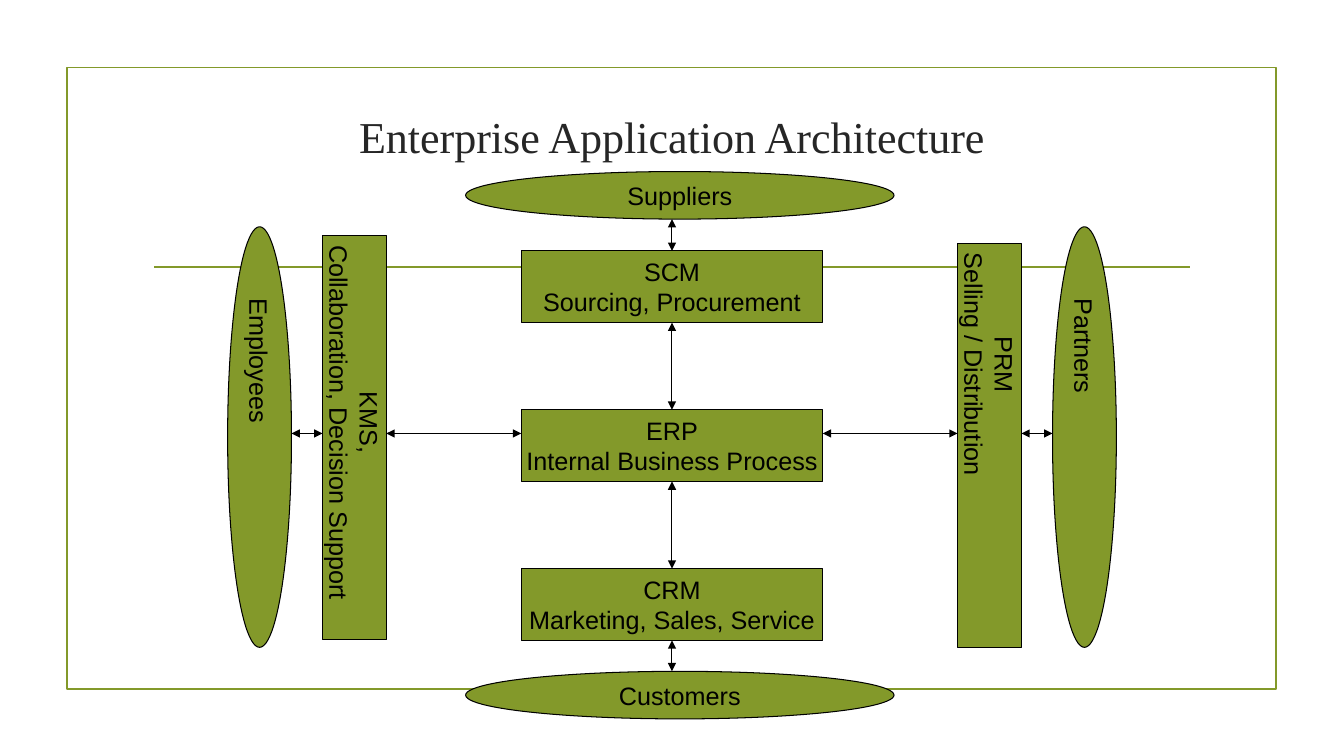
from pptx import Presentation
from pptx.dml.color import RGBColor
from pptx.enum.shapes import MSO_CONNECTOR as Conn, MSO_SHAPE as Kind
from pptx.enum.text import MSO_ANCHOR as Anchor, PP_ALIGN as Align
from pptx.oxml.ns import qn
from pptx.util import Pt
from lxml.etree import SubElement

GREEN, BLACK, DARK = "83992A", "000000", "262626"
TOP, BOTTOM = 0, 2


def color(code):
    return RGBColor.from_string(code)


def write(frame, lines, size, font, code):
    frame.vertical_anchor = Anchor.MIDDLE
    for i, line in enumerate(lines):
        para = frame.add_paragraph() if i else frame.paragraphs[0]
        para.alignment = Align.CENTER
        run = para.add_run()
        run.text = line
        run.font.size = Pt(size)
        run.font.name = font
        run.font.color.rgb = color(code)


def node(slide, kind, box, lines, upright=False):
    shape = slide.shapes.add_shape(kind, *map(Pt, box))
    shape.shadow.inherit = False
    shape.fill.solid()
    shape.fill.fore_color.rgb = color(GREEN)
    shape.line.color.rgb = color(BLACK)
    shape.line.width = Pt(0.75)
    frame = shape.text_frame
    frame.word_wrap = False
    if upright:
        frame._txBody.bodyPr.set("vert", "eaVert")
    write(frame, lines, 18, "Arial", BLACK)
    return shape


def rule(slide, start, end, code, width):
    line = slide.shapes.add_connector(Conn.STRAIGHT, *map(Pt, start + end))
    line.line.color.rgb = color(code)
    line.line.width = Pt(width)
    SubElement(line._element.spPr, qn("a:effectLst"))
    return line


def arrow(slide, start, end):
    line = rule(slide, start, end, BLACK, 0.75)
    ln = line.line._get_or_add_ln()
    for tag in ("a:headEnd", "a:tailEnd"):
        SubElement(ln, qn(tag), type="triangle")
    return line


def border(slide, box):
    x, y, w, h = box
    frame = slide.shapes.add_shape(Kind.RECTANGLE, *map(Pt, box))
    frame.shadow.inherit = False
    frame.fill.background()
    frame.line.color.rgb = color(GREEN)
    frame.line.width = Pt(1.25)
    rule(slide, (x + 62.5, y + 142.6), (x + w - 61.5, y + 142.6), GREEN, 1.25)


def title(slide, box, text):
    frame = slide.shapes.add_textbox(*map(Pt, box)).text_frame
    frame.word_wrap = True
    write(frame, [text], 31.5, "Times New Roman", DARK)


def side(slide, box, group, system, drop, mid, flip=False):
    """An outer group ellipse and the system bar beside it, joined at mid."""
    x, y, w, h = box
    thick = 45.6
    left, right = x, x + w - thick
    outer, inner = (right, left) if flip else (left, right)
    node(slide, Kind.OVAL, (outer, y, thick, h), [group], True)
    node(slide, Kind.RECTANGLE, (inner, y + drop, thick, 289), system, True)
    arrow(slide, (left + thick, mid), (right, mid))


def column(slide, box, ends, systems):
    """Stacked systems between an ellipse at the top and one at the bottom."""
    x, y, w, h = box
    cap, wide, high, step = 34, 215.4, 51.2, 113.5
    left, first = x + 39.7, y + 56.7
    mid = left + wide / 2
    tops = [first + i * step for i in range(len(systems))]
    caps = (y, y + h - cap)
    for name, top in zip(ends, caps):
        node(slide, Kind.OVAL, (x, top, w, cap), [name])
    cards = [node(slide, Kind.RECTANGLE, (left, top, wide, high), lines)
             for top, lines in zip(tops, systems)]

    # Links between neighbouring systems
    for upper, lower, top in zip(cards, cards[1:], tops):
        link = arrow(slide, (mid, top + high), (mid, top + step))
        link.begin_connect(upper, BOTTOM)
        link.end_connect(lower, TOP)

    # Links to the two ellipses
    link = arrow(slide, (mid, y + cap), (mid, first))
    link.end_connect(cards[0], TOP)
    link = arrow(slide, (mid, tops[-1] + high), (mid, caps[1]))
    link.begin_connect(cards[-1], BOTTOM)


def main():
    deck = Presentation()
    deck.slide_width, deck.slide_height = Pt(960), Pt(540)
    slide = deck.slides.add_slide(deck.slide_layouts[6])

    # Backdrop and heading
    border(slide, (47.7, 48.2, 864, 444.2))
    title(slide, (102, 77, 756, 40), "Enterprise Application Architecture")

    # Groups and systems on both sides
    mid = 309.6
    side(slide, (162.6, 162, 113.4, 300.4), "Employees",
         ["KMS,", "Collaboration, Decision Support"], 6, mid)
    side(slide, (684, 162, 113.4, 300.4), "Partners",
         ["PRM", "Selling / Distribution"], 11.6, mid, True)

    # Central chain
    column(slide, (332.6, 122.5, 306, 391), ["Suppliers", "Customers"],
           [["SCM", "Sourcing, Procurement"],
            ["ERP", "Internal Business Process"],
            ["CRM", "Marketing, Sales, Service"]])

    # Links from the centre to each side
    for start, end in ((276, 372.3), (587.7, 684)):
        arrow(slide, (start, mid), (end, mid))

    deck.save("out.pptx")


if __name__ == "__main__":
    main()
